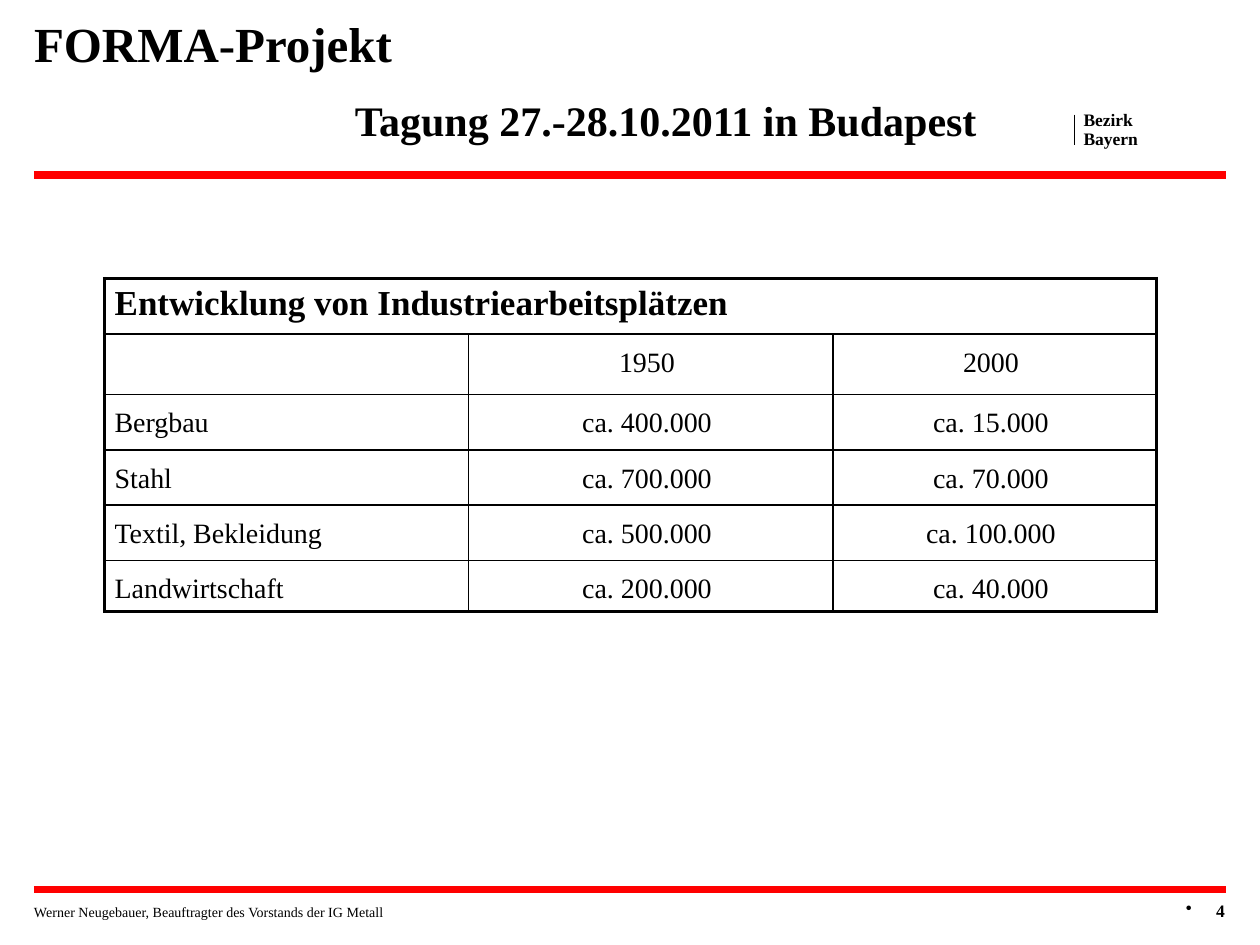
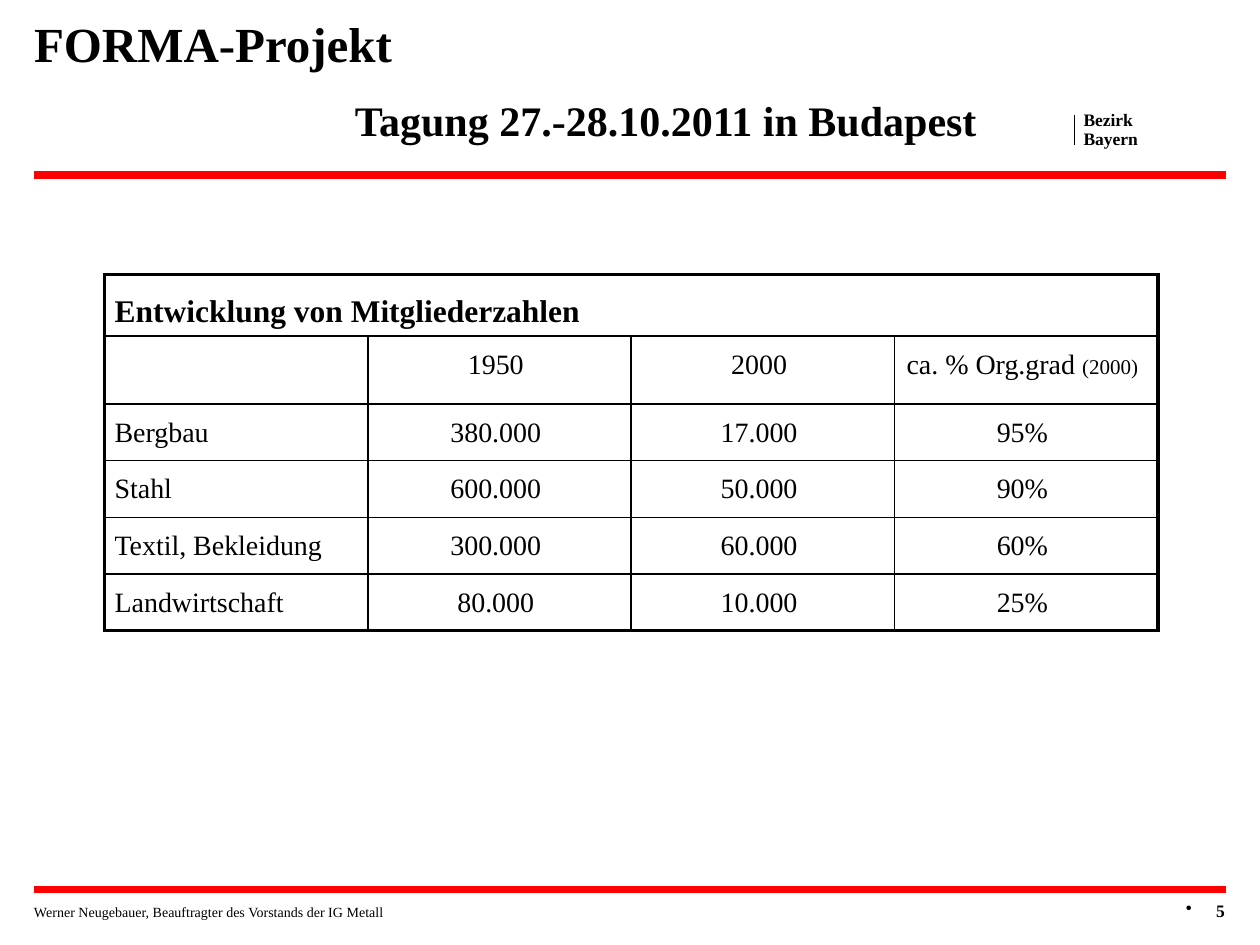
"""Build two conference slides with tables of industrial jobs and union members."""
from dataclasses import dataclass

from lxml import etree
from pptx import Presentation
from pptx.dml.color import RGBColor
from pptx.enum.shapes import MSO_CONNECTOR
from pptx.enum.text import MSO_ANCHOR, MSO_AUTO_SIZE, PP_ALIGN
from pptx.oxml.ns import qn
from pptx.slide import Slide, SlideLayout
from pptx.table import _Cell
from pptx.text.text import TextFrame, _Paragraph
from pptx.util import Inches, Pt

LEFT, CENTER, RIGHT = PP_ALIGN.LEFT, PP_ALIGN.CENTER, PP_ALIGN.RIGHT
TOP = MSO_ANCHOR.TOP
FIT = MSO_AUTO_SIZE.SHAPE_TO_FIT_TEXT
STRAIGHT = MSO_CONNECTOR.STRAIGHT
TITLE_ONLY = 5


@dataclass(frozen=True)
class Theme:
    font: str = "Times New Roman"
    ink: str = "000000"
    accent: str = "FF0000"
    title: float = 28
    subtitle: float = 24
    cell: float = 16
    note: float = 12
    label: float = 10
    footer: float = 8
    band: float = 4.5
    divider: float = 0.8
    frame: float = 2.25
    grid: float = 1


@dataclass(frozen=True)
class Box:
    left: float
    top: float
    width: float
    height: float

    def lengths(self) -> tuple[int, int, int, int]:
        return (Inches(self.left), Inches(self.top),
                Inches(self.width), Inches(self.height))


@dataclass(frozen=True)
class Rule:
    start: tuple[float, float]
    end: tuple[float, float]
    color: str
    weight: float


@dataclass(frozen=True)
class Statistic:
    page: int
    heading: str
    heading_size: float
    heading_leading: float
    top: float
    widths: tuple[float, ...]
    heights: tuple[float, ...]
    rows: tuple[tuple[str, ...], ...]
    last_header_note: str = ""


THEME = Theme()
MARGIN, RIGHT_EDGE = 0.27, 9.73
TABLE_LEFT = 0.83

RULES = (
    Rule((MARGIN, 1.39), (RIGHT_EDGE, 1.39), THEME.accent, THEME.band),
    Rule((8.53, 0.91), (8.53, 1.15), THEME.ink, THEME.divider),
    Rule((MARGIN, 7.06), (RIGHT_EDGE, 7.06), THEME.accent, THEME.band),
)

STATISTICS = (
    Statistic(
        page=4,
        heading="Entwicklung von Industriearbeitsplätzen",
        heading_size=20,
        heading_leading=16,
        top=2.21,
        widths=(2.89, 2.89, 2.57),
        heights=(0.44,) * 5 + (0.4,),
        rows=(
            ("", "1950", "2000"),
            ("Bergbau", "ca. 400.000", "ca. 15.000"),
            ("Stahl", "ca. 700.000", "ca. 70.000"),
            ("Textil, Bekleidung", "ca. 500.000", "ca. 100.000"),
            ("Landwirtschaft", "ca. 200.000", "ca. 40.000"),
        ),
    ),
    Statistic(
        page=5,
        heading="Entwicklung von Mitgliederzahlen",
        heading_size=18,
        heading_leading=22,
        top=2.18,
        widths=(2.09,) * 4,
        heights=(0.48, 0.54) + (0.45,) * 4,
        rows=(
            ("", "1950", "2000", "ca. % Org.grad "),
            ("Bergbau", "380.000", "17.000", "95%"),
            ("Stahl", "600.000", "50.000", "90%"),
            ("Textil, Bekleidung", "300.000", "60.000", "60%"),
            ("Landwirtschaft", "80.000", "10.000", "25%"),
        ),
        last_header_note="(2000)",
    ),
)


def write(frame: TextFrame, text: str, *, size: float, leading: float,
          bold: bool = False, align: PP_ALIGN = LEFT, note: str = "") -> _Paragraph:
    """Write one formatted paragraph, with an optional small note after it."""
    paragraph = frame.paragraphs[0]
    paragraph.text = text
    paragraph.alignment = align
    paragraph.line_spacing = Pt(leading)
    sizes = [size] * len(paragraph.runs)
    if note:
        paragraph.add_run().text = note
        sizes.append(THEME.note)
    for run, run_size in zip(paragraph.runs, sizes):
        run.font.name = THEME.font
        run.font.size = Pt(run_size)
        run.font.bold = bold
        run.font.color.rgb = RGBColor.from_string(THEME.ink)
    return paragraph


def fit_frame(frame: TextFrame, wrap: bool = True) -> TextFrame:
    """Remove the margins of a text frame and fit its shape to the text."""
    frame.margin_left = frame.margin_right = 0
    frame.margin_top = frame.margin_bottom = 0
    frame.vertical_anchor = TOP
    frame.word_wrap = wrap
    frame.auto_size = FIT
    return frame


def add_frame(slide: Slide, box: Box, wrap: bool = True) -> TextFrame:
    """Add a text box without margins."""
    return fit_frame(slide.shapes.add_textbox(*box.lengths()).text_frame, wrap)


def add_rule(slide: Slide, rule: Rule) -> None:
    """Draw a straight line without shadow."""
    line = slide.shapes.add_connector(
        STRAIGHT, *(Inches(value) for value in rule.start + rule.end))
    line.line.color.rgb = RGBColor.from_string(rule.color)
    line.line.width = Pt(rule.weight)
    etree.SubElement(line.element.spPr, qn("a:effectLst"))


def furnish_layout(layout: SlideLayout, slide: Slide) -> None:
    """Draw the shared bands, district label and footer and move them to the layout."""
    title = slide.shapes.title
    for rule in RULES:
        add_rule(slide, rule)
    write(add_frame(slide, Box(8.6, 0.88, 0.44, 0.31), wrap=False),
          "Bezirk\vBayern", size=THEME.label, leading=11, bold=True)
    write(add_frame(slide, Box(MARGIN, 7.14, 8.66, 0.17)),
          "Werner Neugebauer, Beauftragter des Vorstands der IG Metall",
          size=THEME.footer, leading=12)
    for shape in list(slide.shapes):
        if shape.shape_id != title.shape_id:
            layout.shapes.element.append(shape.element)


def add_headings(slide: Slide) -> None:
    """Fill the title and add the line with the conference date."""
    title = slide.shapes.title
    title.left, title.top, title.width, title.height = Box(MARGIN, 0.21, 7.48, 0.36).lengths()
    write(fit_frame(title.text_frame), "FORMA-Projekt",
          size=THEME.title, leading=26, bold=True)
    write(add_frame(slide, Box(MARGIN, 0.79, 7.48, 0.36)),
          "Tagung 27.-28.10.2011 in Budapest",
          size=THEME.subtitle, leading=26, bold=True, align=RIGHT)


def add_page_number(slide: Slide, page: int) -> None:
    """Add the bulleted page number at the lower right."""
    number = write(add_frame(slide, Box(9.33, 7.14, 0.39, 0.17)), str(page),
                   size=THEME.label, leading=12, bold=True, align=RIGHT)
    properties = number._p.get_or_add_pPr()
    properties.set("marL", str(Inches(0.24)))
    properties.set("indent", str(-Inches(0.24)))
    etree.SubElement(properties, qn("a:buChar"), char="•")


def style_cell(cell: _Cell, outer_edges: dict[str, bool]) -> None:
    """Set margins, borders and an empty fill on a cell."""
    cell.margin_left, cell.margin_top = Inches(0.08), Inches(0.13)
    cell.margin_right, cell.margin_bottom = Inches(0.14), Inches(0.05)
    cell.vertical_anchor = TOP
    properties = cell._tc.get_or_add_tcPr()
    for edge, outer in outer_edges.items():
        weight = THEME.frame if outer else THEME.grid
        border = etree.SubElement(properties, qn(f"a:{edge}"), w=str(Pt(weight)))
        fill = etree.SubElement(border, qn("a:solidFill"))
        etree.SubElement(fill, qn("a:srgbClr"), val=THEME.ink)
    cell.fill.background()


def add_statistic(slide: Slide, statistic: Statistic) -> None:
    """Draw the framed table with its merged heading row."""
    row_count, column_count = len(statistic.heights), len(statistic.widths)
    box = Box(TABLE_LEFT, statistic.top, sum(statistic.widths), sum(statistic.heights))
    table = slide.shapes.add_table(row_count, column_count, *box.lengths()).table
    table.first_row = table.horz_banding = False
    for column, width in zip(table.columns, statistic.widths):
        column.width = Inches(width)
    for row, height in zip(table.rows, statistic.heights):
        row.height = Inches(height)

    heading = table.cell(0, 0)
    heading.merge(table.cell(0, column_count - 1))
    for r in range(row_count):
        for c in range(column_count):
            cell = table.cell(r, c)
            style_cell(cell, {
                "lnL": c == 0,
                "lnR": c == column_count - 1 or cell.is_merge_origin,
                "lnT": r == 0,
                "lnB": r == row_count - 1,
            })
    write(heading.text_frame, statistic.heading, size=statistic.heading_size,
          leading=statistic.heading_leading, bold=True)
    for r, values in enumerate(statistic.rows, start=1):
        for c, value in enumerate(values):
            is_last_header = r == 1 and c == column_count - 1
            write(table.cell(r, c).text_frame, value, size=THEME.cell, leading=16,
                  align=CENTER if c else LEFT,
                  note=statistic.last_header_note if is_last_header else "")


def main() -> None:
    """Build and save the presentation."""
    presentation = Presentation()
    presentation.slide_width, presentation.slide_height = Inches(10), Inches(7.5)
    layout = presentation.slide_layouts[TITLE_ONLY]
    for index, statistic in enumerate(STATISTICS):
        slide = presentation.slides.add_slide(layout)
        if index == 0:
            furnish_layout(layout, slide)
        add_headings(slide)
        add_page_number(slide, statistic.page)
        add_statistic(slide, statistic)
    presentation.save("out.pptx")


if __name__ == "__main__":
    main()
